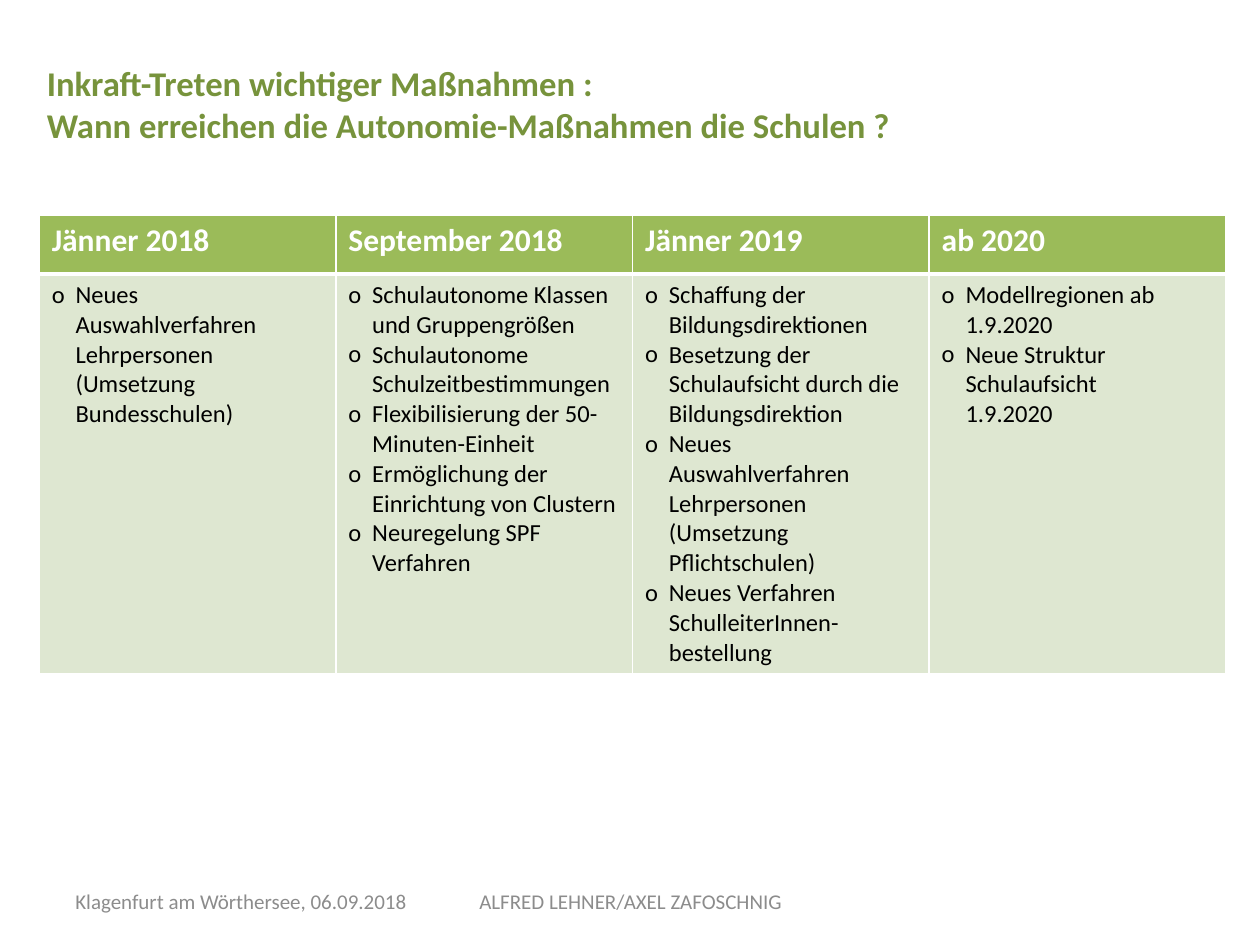
"""Build the slide on when the school autonomy measures take effect."""
from dataclasses import dataclass

from pptx import Presentation
from pptx.dml.color import RGBColor as Color
from pptx.enum.text import MSO_ANCHOR as Anchor, MSO_AUTO_SIZE as AutoSize, PP_ALIGN as Align
from pptx.oxml import parse_xml
from pptx.oxml.ns import nsdecls
from pptx.util import Cm, Pt

TITLE = "Inkraft-Treten wichtiger Maßnahmen :\vWann erreichen die Autonomie-Maßnahmen die Schulen ?"
MEASURES = {
    "Jänner 2018": [
        "Neues Auswahlverfahren Lehrpersonen",
        "(Umsetzung Bundesschulen)",
    ],
    "September 2018": [
        "Schulautonome Klassen und Gruppengrößen",
        "Schulautonome Schulzeitbestimmungen",
        "Flexibilisierung der 50-Minuten-Einheit",
        "Ermöglichung der Einrichtung von Clustern",
        "Neuregelung SPF Verfahren",
    ],
    "Jänner 2019": [
        "Schaffung der Bildungsdirektionen",
        "Besetzung der Schulaufsicht durch die Bildungsdirektion",
        "Neues Auswahlverfahren Lehrpersonen",
        "(Umsetzung Pflichtschulen)",
        "Neues Verfahren SchulleiterInnen-bestellung",
    ],
    "ab 2020": [
        "Modellregionen ab 1.9.2020",
        "Neue Struktur Schulaufsicht\v1.9.2020",
    ],
}


@dataclass(frozen=True)
class Theme:
    """Colours, font and type sizes of the slide."""
    font: str = "Calibri"
    title_color: Color = Color(0x77, 0x93, 0x3C)
    header_fill: Color = Color(0x9B, 0xBB, 0x59)
    body_fill: Color = Color(0xDE, 0xE7, 0xD1)
    white: Color = Color(0xFF, 0xFF, 0xFF)
    black: Color = Color(0, 0, 0)
    footer_color: Color = Color(0x8C, 0x8C, 0x8C)
    title_size: float = 19.8
    header_size: float = 18
    body_size: float = 14
    footer_size: float = 12
    thin_line: float = 1
    thick_line: float = 3
    indent: float = 0.48


class SlideBuilder:
    """Draw styled elements on the current slide."""

    def __init__(self, slide, theme):
        """Keep the slide and its theme."""
        self.slide = slide
        self.theme = theme

    def format_runs(self, paragraph, size, color, bold=False):
        """Give every run of a paragraph the same look."""
        for run in paragraph.runs:
            run.font.name = self.theme.font
            run.font.size = Pt(size)
            run.font.bold = bold
            run.font.color.rgb = color

    def title(self, text, left, top, width, height):
        """Place and fill the title placeholder."""
        shape = self.slide.shapes.title
        shape.left, shape.top, shape.width, shape.height = map(Cm, (left, top, width, height))
        frame = shape.text_frame
        frame.text = text
        frame.auto_size = AutoSize.NONE
        frame.vertical_anchor = Anchor.TOP
        paragraph = frame.paragraphs[0]
        paragraph.alignment = Align.LEFT
        self.format_runs(paragraph, self.theme.title_size, self.theme.title_color, True)

    def footer(self, text, left, top, width, height, alignment):
        """Add one footer text box."""
        frame = self.slide.shapes.add_textbox(*map(Cm, (left, top, width, height))).text_frame
        frame.word_wrap = True
        frame.vertical_anchor = Anchor.MIDDLE
        frame.text = text
        paragraph = frame.paragraphs[0]
        paragraph.alignment = alignment
        self.format_runs(paragraph, self.theme.footer_size, self.theme.footer_color)

    def style_cell(self, cell, fill, thick_side):
        """Set the borders and the fill of a cell."""
        properties = cell._tc.get_or_add_tcPr()
        for side in "LRTB":
            width = self.theme.thick_line if side == thick_side else self.theme.thin_line
            properties.append(parse_xml(
                f'<a:ln{side} {nsdecls("a")} w="{Pt(width)}"><a:solidFill>'
                f'<a:srgbClr val="{self.theme.white}"/></a:solidFill></a:ln{side}>'))
        cell.fill.solid()
        cell.fill.fore_color.rgb = fill

    def bullet(self, paragraph, hanging):
        """Indent a paragraph, with a hanging bullet if wanted."""
        properties = paragraph._p.get_or_add_pPr()
        indent = Cm(self.theme.indent)
        properties.set("marL", str(indent))
        properties.set("indent", str(-indent if hanging else 0))
        if hanging:
            properties.append(parse_xml(f'<a:buFont {nsdecls("a")} typeface="{self.theme.font}"/>'))
            properties.append(parse_xml(f'<a:buChar {nsdecls("a")} char="o"/>'))

    def table(self, columns, left, top, width, row_heights):
        """Add a table with a header and a list in each column."""
        theme = self.theme
        box = map(Cm, (left, top, width, sum(row_heights)))
        table = self.slide.shapes.add_table(2, len(columns), *box).table
        for row, height in zip(table.rows, row_heights):
            row.height = Cm(height)
        for index, (heading, items) in enumerate(columns.items()):
            header, body = table.cell(0, index), table.cell(1, index)
            self.style_cell(header, theme.header_fill, "B")
            self.style_cell(body, theme.body_fill, "T")
            header.text_frame.text = heading
            self.format_runs(header.text_frame.paragraphs[0], theme.header_size, theme.white, True)
            body.text_frame.text = "\n".join(items)
            for paragraph, item in zip(body.text_frame.paragraphs, items):
                self.bullet(paragraph, hanging=not item.startswith("("))
                self.format_runs(paragraph, theme.body_size, theme.black)


def main():
    """Create and save the presentation."""
    presentation = Presentation()
    presentation.slide_width, presentation.slide_height = Cm(25.4), Cm(19.05)
    slide = presentation.slides.add_slide(presentation.slide_layouts[5])
    builder = SlideBuilder(slide, Theme())
    builder.title(TITLE, 0.69, 1.12, 22.86, 2.57)
    builder.table(MEASURES, 0.79, 4.33, 23.92, (1.19, 7.98))
    builder.footer("Klagenfurt am Wörthersee, 06.09.2018", 1.27, 17.65, 7.42, 1.02, Align.LEFT)
    builder.footer("ALFRED LEHNER/AXEL ZAFOSCHNIG", 8.69, 17.65, 8.05, 1.02, Align.CENTER)
    presentation.save("out.pptx")


if __name__ == "__main__":
    main()
